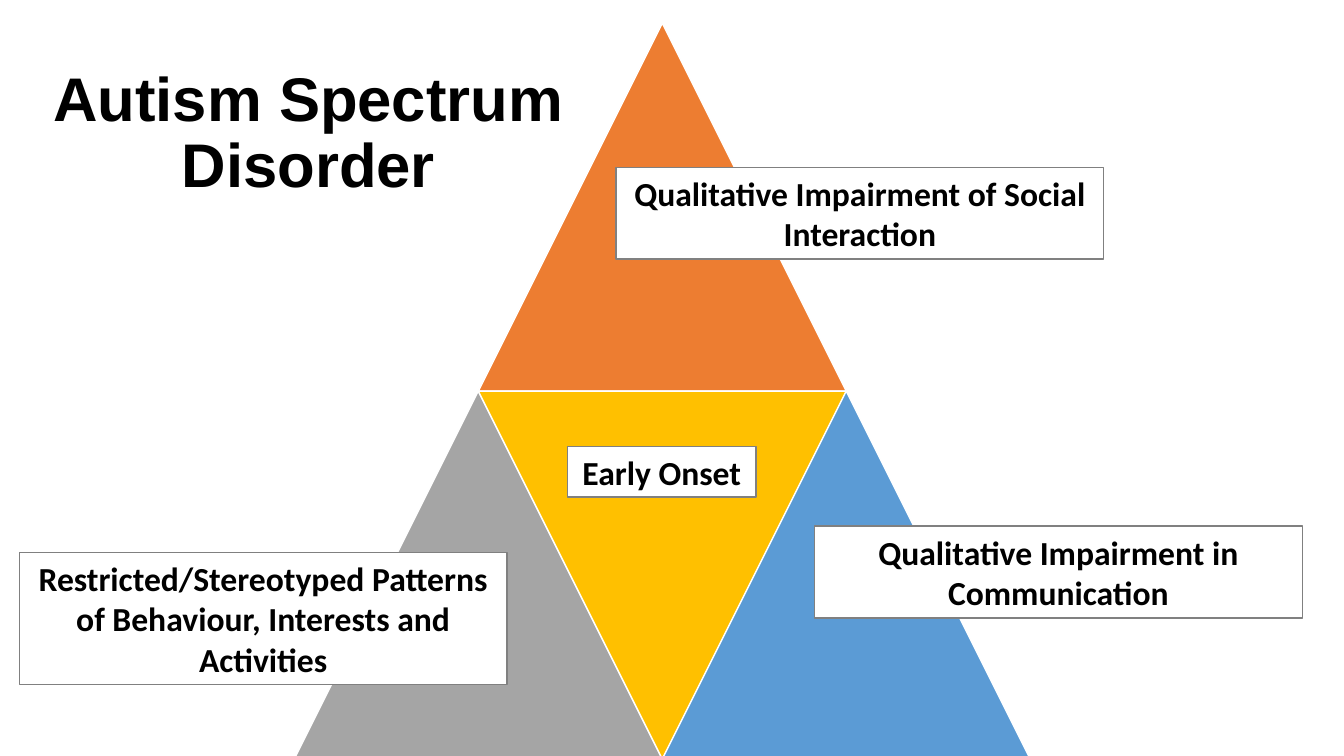
from pptx import Presentation
from pptx.dml.color import RGBColor
from pptx.enum.shapes import MSO_SHAPE
from pptx.enum.text import MSO_ANCHOR, PP_ALIGN
from pptx.util import Inches, Pt

WIDTH, HEIGHT = Inches(13.33), Inches(7.5)
BLACK = RGBColor(0x00, 0x00, 0x00)
WHITE = RGBColor(0xFF, 0xFF, 0xFF)
GREY = RGBColor(0x80, 0x80, 0x80)
ORANGE = RGBColor(0xED, 0x7D, 0x31)
SILVER = RGBColor(0xA5, 0xA5, 0xA5)
GOLD = RGBColor(0xFF, 0xC0, 0x00)
BLUE = RGBColor(0x5B, 0x9B, 0xD5)

PYRAMID_LEFT, PYRAMID_TOP = 21.9, 3.07
TRIANGLE_W, TRIANGLE_H = 27.38, 48.67
TRIANGLES = [
    (1, 0, ORANGE, 0),
    (0, 1, SILVER, 0),
    (1, 1, GOLD, 180),
    (2, 1, BLUE, 0),
]
LABELS = [
    ("Qualitative Impairment of Social Interaction", 45.83, 22.13, 36.3, 12.13),
    ("Early Onset", 42.23, 59.07, 14.03, 6.67),
    ("Restricted/Stereotyped Patterns of Behaviour, Interests and Activities",
     1.43, 73.07, 36.3, 17.47),
    ("Qualitative Impairment in Communication", 60.6, 69.6, 36.3, 12.13),
]


def place(left, top, width, height):
    """Turn percentages of the slide into a position and size."""
    return (int(WIDTH * left / 100), int(HEIGHT * top / 100),
            int(WIDTH * width / 100), int(HEIGHT * height / 100))


def write(s, text, font, size):
    """Fill a shape with centred bold black text."""
    tf = s.text_frame
    tf.text = text
    tf.word_wrap = True
    tf.vertical_anchor = MSO_ANCHOR.MIDDLE
    p = tf.paragraphs[0]
    p.alignment = PP_ALIGN.CENTER
    for r in p.runs:
        r.font.name, r.font.size, r.font.bold = font, Pt(size), True
        r.font.color.rgb = BLACK
    return p


def add_figure(slide, kind, box, fill, line):
    """Add a flat shape with a thin outline."""
    s = slide.shapes.add_shape(kind, *place(*box))
    s.shadow.inherit = False
    s.fill.solid()
    s.fill.fore_color.rgb = fill
    s.line.color.rgb = line
    s.line.width = Pt(1)
    return s


def add_triangle(slide, half_col, row, fill, rotation):
    """Add one triangle of the pyramid at a half-width column and a row."""
    box = (PYRAMID_LEFT + half_col * TRIANGLE_W / 2,
           PYRAMID_TOP + row * TRIANGLE_H, TRIANGLE_W, TRIANGLE_H)
    s = add_figure(slide, MSO_SHAPE.ISOSCELES_TRIANGLE, box, fill, WHITE)
    s.rotation = rotation


def add_label(slide, text, *box):
    """Add a white label with a grey border."""
    s = add_figure(slide, MSO_SHAPE.RECTANGLE, box, WHITE, GREY)
    write(s, text, "Calibri", 24)


def set_title(slide, text, *box):
    """Move and format the title placeholder."""
    s = slide.shapes.title
    s.left, s.top, s.width, s.height = place(*box)
    write(s, text, "Arial", 44).line_spacing = 0.9


def main():
    """Build the slide and save it."""
    prs = Presentation()
    prs.slide_width, prs.slide_height = WIDTH, HEIGHT
    slide = prs.slides.add_slide(prs.slide_layouts[5])
    for triangle in TRIANGLES:
        add_triangle(slide, *triangle)
    set_title(slide, "Autism Spectrum\vDisorder", 2.33, 8.13, 41.25, 19.33)
    for label in LABELS:
        add_label(slide, *label)
    prs.save("out.pptx")


if __name__ == "__main__":
    main()
